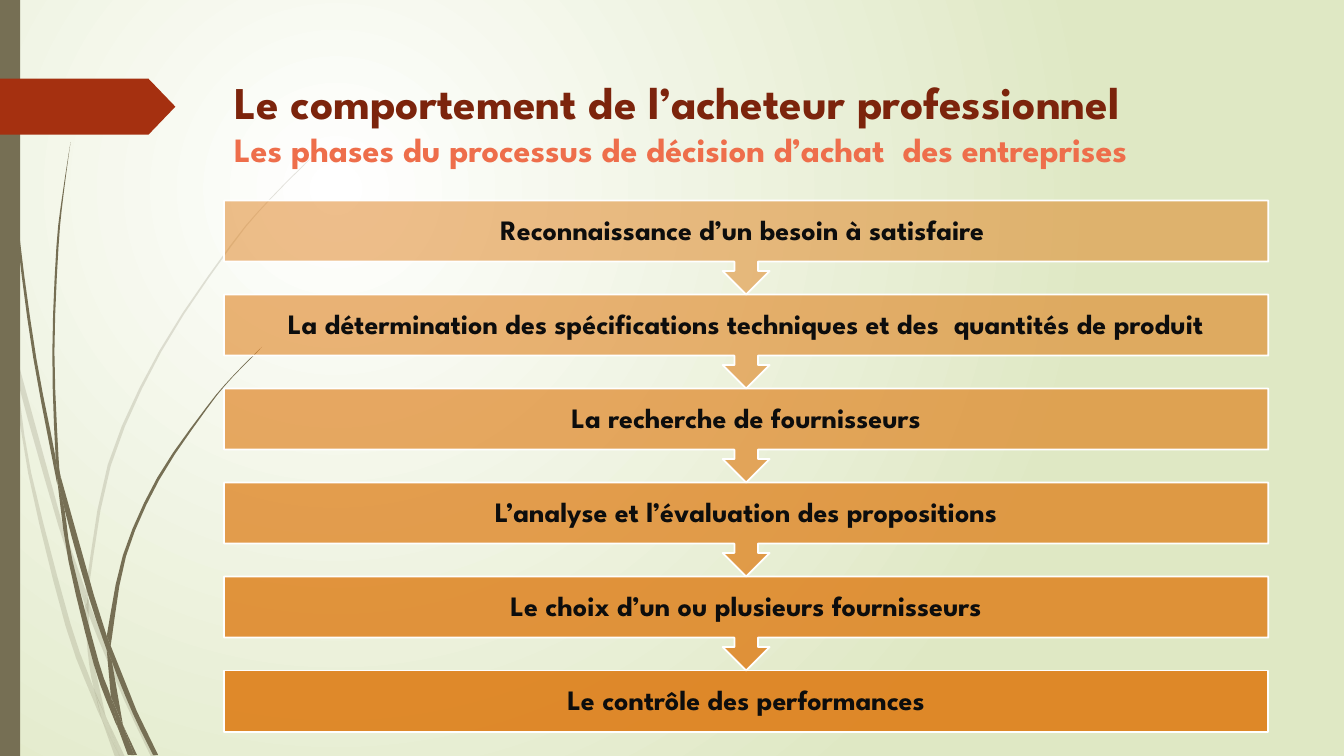
from lxml import etree
from pptx import Presentation
from pptx import util as u
from pptx.dml import color
from pptx.enum import shapes, text
from pptx.oxml import ns

FONT = "League Spartan"
OLIVE = "766F54"
STEPS = [
    "Reconnaissance d’un besoin à satisfaire ",
    "La détermination des spécifications techniques et des  quantités de produit",
    "La recherche de fournisseurs",
    "L’analyse et l’évaluation des propositions",
    "Le choix d’un ou plusieurs fournisseurs",
    "Le contrôle des performances",
]
PALE_BLADES = [
    ([(0, 215.3), (7.2, 247.7), (7.9, 252)], [(0, 203), (6.5, 231.8), (7.9, 252)]),
    ([(10.1, 248.4), (12.2, 270.7), (41.8, 375.8), (60.5, 431.3)],
     [(10.1, 248.4), (44.6, 374.4), (61.2, 421.9)]),
    ([(63.4, 429.1), (63.4, 439.2), (88.6, 499.7), (108, 540.7)],
     [(63.4, 429.1), (66.2, 437), (91.4, 498.2), (111.6, 540.7)]),
    ([(75.6, 511.9), (85.7, 540.7)], [(75.6, 511.9), (89.3, 540.7)]),
    ([(7.9, 252), (20.2, 338.4), (46.8, 447.1), (66.2, 499), (72.7, 514.1)],
     [(7.9, 252), (12.2, 270.7), (22.3, 337.7), (50.4, 445.7), (67, 491.8), (72.7, 514.1)]),
    ([(60.5, 431.3), (62.6, 465.1), (67, 491.8), (75.6, 511.9)],
     [(60.5, 431.3), (63.4, 439.2), (65.5, 465.1), (75.6, 511.9)]),
    ([(224.6, 110.2), (193, 141.8), (164.2, 175.7), (113.8, 250.6), (77, 331.9), (61.2, 421.2)],
     [(224.6, 110.9), (193, 142.6), (164.9, 176.4), (115.2, 251.3), (79.2, 332.6),
      (63.4, 420.5), (63.4, 429.1)]),
    ([(72.7, 514.1), (82.1, 540.7)], [(72.7, 514.1), (85.7, 540.7)]),
    ([(61.2, 421.9), (60.5, 431.3)], [(61.2, 421.9), (63.4, 429.1), (63.4, 439.2)]),
    ([(67, 491.8), (72.7, 514.1), (85.7, 540.7)], [(67, 491.8), (75.6, 511.9), (85.7, 540.7)]),
]
DARK_BLADES = [
    ([(2.2, 0), (2.9, 34.6), (5, 79.2), (12.2, 167.8), (23.8, 255.6), (41, 346.3)],
     [(2.9, 0), (3.6, 34.6), (5.8, 78.5), (13.7, 167), (25.9, 255.6), (39.6, 326.2),
      (41, 346.3)]),
    ([(43.2, 339.8), (46.1, 363.6), (63.4, 426.2), (76.3, 464.4)],
     [(43.2, 339.8), (67, 424.8), (76.3, 454.3)]),
    ([(79.2, 461.5), (79.9, 472.3), (95, 509.8), (109.4, 539.3)],
     [(79.2, 461.5), (97.9, 508.3), (113, 539.3)]),
    ([(41, 343.4), (49, 401), (67, 474.5), (79.9, 509.8), (84.2, 519.8)],
     [(41, 343.4), (46.1, 363.6), (51.8, 400.3), (70.6, 473), (79.2, 497.5), (84.2, 519.8)]),
    ([(50.4, 101.5), (44.6, 139), (40.3, 176.4), (37.4, 251.3), (39.6, 323.3), (43.2, 339.8)],
     [(50.4, 101.5), (45.4, 139), (41.8, 176.4), (38.9, 251.3), (41.8, 326.2),
      (43.2, 339.8)]),
    ([(87.8, 517.7), (95.8, 539.3)], [(87.8, 517.7), (97.9, 539.3)]),
    ([(39.6, 323.3), (41, 343.4)], [(39.6, 323.3), (43.2, 339.8), (46.1, 363.6)]),
    ([(187.2, 247.7), (166.3, 268.6), (146.9, 291.6), (112.3, 341.3), (87.8, 396.7),
      (76.3, 454.3)],
     [(187.9, 247.7), (166.3, 269.3), (147.6, 292.3), (113.8, 342.7), (90, 397.4),
      (79.9, 455.8), (79.2, 461.5)]),
    ([(84.2, 519.8), (91.4, 539.3)], [(84.2, 519.8), (94.3, 539.3)]),
    ([(76.3, 464.4), (79.2, 497.5), (87.8, 517.7)],
     [(76.3, 464.4), (79.9, 472.3), (87.8, 517.7)]),
    ([(76.3, 454.3), (76.3, 464.4)], [(76.3, 454.3), (79.2, 461.5), (79.9, 472.3)]),
    ([(79.2, 497.5), (84.2, 519.8), (93.6, 539.3)],
     [(79.2, 497.5), (87.8, 517.7), (95.8, 539.3)]),
]


def rgb(value):
    """Return the colour for a hex string."""
    return color.RGBColor.from_string(value)


def paint(shape, fill, opacity=100, line=None):
    """Give a shape a flat fill, an optional outline and no shadow."""
    shape.shadow.inherit = False
    shape.fill.solid()
    shape.fill.fore_color.rgb = rgb(fill)
    if opacity < 100:
        fill_color = shape._element.spPr.find(".//" + ns.qn("a:srgbClr"))
        etree.SubElement(fill_color, ns.qn("a:alpha"), val=str(opacity * 1000))
    if line:
        shape.line.color.rgb = rgb(line)
        shape.line.width = u.Pt(1.25)
    else:
        shape.line.fill.background()


def style_run(run, size, fill):
    """Set the bold slide font on a run."""
    run.font.name, run.font.size, run.font.bold = FONT, u.Pt(size), True
    run.font.color.rgb = rgb(fill)


def smooth(nodes):
    """Return the nodes of a long edge with thirds of a Catmull-Rom curve between them."""
    if len(nodes) < 4:
        return nodes
    padded = [nodes[0], *nodes, nodes[-1]]
    points = [nodes[0]]
    for a, b, c, d in zip(padded, padded[1:], padded[2:], padded[3:]):
        for t in (1 / 3, 2 / 3, 1):
            points.append(tuple(
                q + t * (r - p) / 2 + t**2 * (p - 2.5 * q + 2 * r - s / 2)
                + t**3 * (3 * q - p - 3 * r + s) / 2
                for p, q, r, s in zip(a, b, c, d)))
    return points


def add_background(slide):
    """Fill the slide with a circular pale green gradient."""
    fill = slide.background.fill
    fill.gradient()
    for stop, position, value in zip(fill.gradient_stops, (0, 1), ("FFFFFF", "DFE8C4")):
        stop.position = position
        stop.color.rgb = rgb(value)
    gradient = slide._element.find(".//" + ns.qn("a:gradFill"))
    circle = etree.Element(ns.qn("a:path"), path="circle")
    etree.SubElement(circle, ns.qn("a:fillToRect"), l="50000", t="50000", r="100000", b="100000")
    gradient.replace(gradient.find(ns.qn("a:lin")), circle)


def add_blades(slide, blades, opacity, left, top):
    """Draw a group of tapering blades from their left and right edges."""
    group = slide.shapes.add_group_shape()
    for left_edge, right_edge in blades:
        outline = [(u.Pt(left + x), u.Pt(top + y))
                   for x, y in smooth(left_edge) + smooth(right_edge)[:0:-1]]
        builder = group.shapes.build_freeform(*outline[0])
        builder.add_line_segments(outline[1:], close=True)
        paint(builder.convert_to_shape(), OLIVE, opacity)


def add_side_decoration(slide, left, top, height):
    """Draw the blades, the side bar and the red tag."""
    add_blades(slide, PALE_BLADES, 20, left, top)
    add_blades(slide, DARK_BLADES, 100, left, top)
    bar = slide.shapes.add_shape(
        shapes.MSO_SHAPE.RECTANGLE, u.Pt(left), u.Pt(top), u.Pt(14.4), u.Pt(height))
    paint(bar, OLIVE)
    tag = slide.shapes.add_shape(
        shapes.MSO_SHAPE.PENTAGON, u.Pt(left), u.Pt(top + 56.2), u.Pt(125.3), u.Pt(40))
    tag.adjustments[0] = 0.48
    paint(tag, "A53010")


def add_title(slide, left, top, width, height):
    """Set the two-line title in front of the decoration."""
    title = slide.shapes.title
    title.left, title.top, title.width, title.height = map(u.Pt, (left, top, width, height))
    frame = title.text_frame
    frame.text = ("Le comportement de l’acheteur professionnel\v"
                  "Les phases du processus de décision d’achat  des entreprises")
    frame.word_wrap = True
    frame.auto_size = text.MSO_AUTO_SIZE.NONE
    frame.vertical_anchor = text.MSO_ANCHOR.TOP
    paragraph = frame.paragraphs[0]
    paragraph.alignment = text.PP_ALIGN.LEFT
    heading, subheading = paragraph.runs
    style_run(heading, 32.4, "7C240C")
    style_run(subheading, 24.3, "EE6E4B")
    title.element.getparent().append(title.element)


def add_steps(slide, left, top, width, pitch, box_height):
    """Stack the phases from last to first, each pointing to the next."""
    last = len(STEPS) - 1
    for index, label in reversed(list(enumerate(STEPS))):
        kind, height = shapes.MSO_SHAPE.DOWN_ARROW_CALLOUT, pitch
        if index == last:
            kind, height = shapes.MSO_SHAPE.RECTANGLE, box_height
        step = slide.shapes.add_shape(
            kind, u.Pt(left), u.Pt(top + index * pitch), u.Pt(width), u.Pt(height))
        paint(step, "DE7E18", 50 + 8 * index, "FFFFFF")
        frame = step.text_frame
        frame.text = label
        frame.word_wrap = True
        frame.vertical_anchor = text.MSO_ANCHOR.MIDDLE
        frame.margin_left = frame.margin_right = u.Pt(11.4)
        frame.margin_top = frame.margin_bottom = u.Pt(11.4)
        paragraph = frame.paragraphs[0]
        paragraph.alignment = text.PP_ALIGN.CENTER
        paragraph.line_spacing = 0.9
        style_run(paragraph.runs[0], 20, "0D0D0D")


def main():
    """Build and save the slide."""
    presentation = Presentation()
    presentation.slide_width, presentation.slide_height = u.Pt(960), u.Pt(540)
    slide = presentation.slides.add_slide(presentation.slide_layouts[5])
    add_background(slide)
    add_side_decoration(slide, 0, 0, 540)
    add_title(slide, 160, 49, 746, 101)
    add_steps(slide, 160, 143.2, 746, 67.15, 44)
    presentation.save("out.pptx")


if __name__ == "__main__":
    main()
